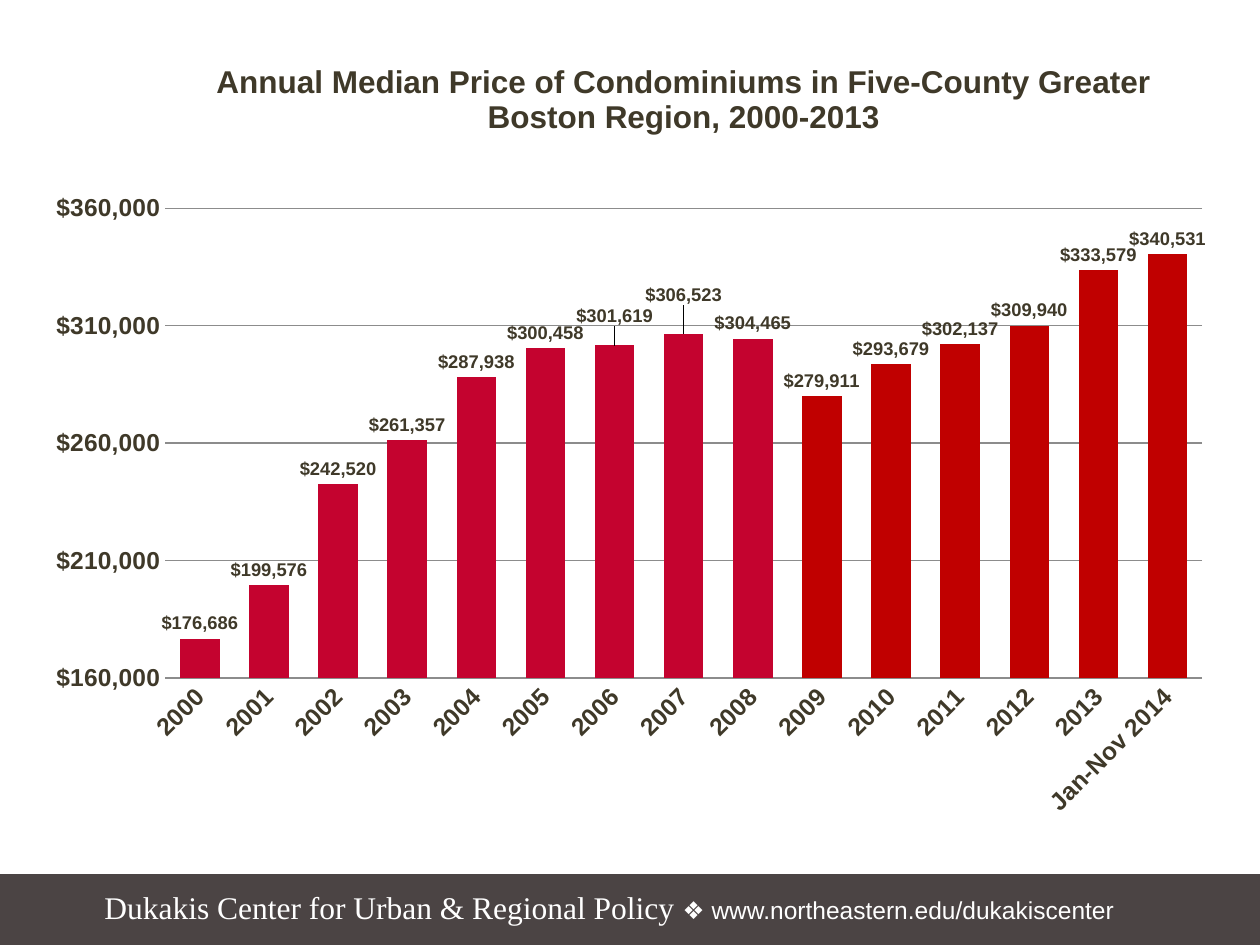
"""Build a slide with a column chart of Greater Boston condominium prices."""
from lxml import etree
from pptx import Presentation
from pptx import util as u
from pptx.chart import data as cd
from pptx.dml.color import RGBColor
from pptx.enum import chart as ch, shapes, text
from pptx.oxml import parse_xml
from pptx.oxml.ns import nsdecls, qn

TITLE = "Annual Median Price of Condominiums in Five-County Greater Boston Region, 2000-2013"
FOOTER = [("Dukakis Center for Urban & Regional Policy ", 18, "Times New Roman"),
          ("❖ www.northeastern.edu/dukakiscenter", 14, "Arial")]
YEARS = [str(y) for y in range(2000, 2014)] + ["Jan-Nov 2014"]
PRICES = [176686, 199576, 242520, 261357, 287938, 300458, 301619, 306523,
          304465, 279911, 293679, 302137, 309940, 333579, 340531]
FIRST_DARK = YEARS.index("2009")
RAISED_LABELS = {"2006": -0.017, "2007": -0.029}
COLORS = {"bar": "C4032F", "dark": "C00000", "text": "3F3929",
          "grid": "8C8C8C", "band": "4B4444", "white": "FFFFFF"}
MONEY = '"$"#,##0'


def rgb(name):
    return RGBColor.from_string(COLORS[name])


def style(font, size, color="text", bold=True, name="Arial"):
    font.size, font.bold, font.name = u.Pt(size), bold, name
    font.color.rgb = rgb(color)


def layout(**values):
    parts = "".join(f'<c:{k} val="{v}"/>' for k, v in values.items())
    return parse_xml(f'<c:layout {nsdecls("c")}><c:manualLayout>{parts}'
                     '</c:manualLayout></c:layout>')


def set_layout(parent, index, **values):
    for old in parent.findall(qn("c:layout")):
        parent.remove(old)
    parent.insert(index, layout(**values))


def add_footer(s):
    sp = s.shapes.add_shape(shapes.MSO_SHAPE.RECTANGLE, u.Pt(-0.7), u.Pt(499.7),
                            u.Pt(722.9), u.Pt(41.8))
    sp.shadow.inherit = False
    sp.fill.solid()
    sp.fill.fore_color.rgb = sp.line.color.rgb = rgb("band")
    sp.line.width = u.Pt(0.75)
    tf = s.shapes.add_textbox(u.Pt(52.6), u.Pt(504), u.Pt(614.2), u.Pt(28.8)).text_frame
    tf.word_wrap = True
    tf.auto_size = text.MSO_AUTO_SIZE.SHAPE_TO_FIT_TEXT
    for words, size, name in FOOTER:
        r = tf.paragraphs[0].add_run()
        r.text = words
        style(r.font, size, "white", False, name)


def add_price_chart(s):
    data = cd.CategoryChartData(number_format=MONEY)
    data.categories = YEARS
    data.add_series("Series 1", PRICES)
    chart = s.shapes.add_chart(ch.XL_CHART_TYPE.COLUMN_CLUSTERED, u.Pt(18.7), u.Pt(22.3),
                               u.Pt(682.6), u.Pt(453.6), data).chart
    style(chart.font, 10, bold=False)
    chart.has_legend = False
    chart.has_title = True
    tf = chart.chart_title.text_frame
    tf.text = TITLE
    style(tf.paragraphs[0].runs[0].font, 18)
    chart.chart_title.include_in_layout = False
    set_layout(chart.chart_title._element, 1, xMode="edge", yMode="edge", x=0.149, y=0.02)
    set_layout(chart._chartSpace.chart.plotArea, 0, layoutTarget="inner", xMode="edge",
               yMode="edge", x=0.111, y=0.154, w=0.868, h=0.651)

    cat, val = chart.category_axis, chart.value_axis
    for axis in (cat, val):
        axis.major_tick_mark = axis.minor_tick_mark = ch.XL_TICK_MARK.NONE
        style(axis.tick_labels.font, 14)
    cat._element.find(qn("c:txPr")).find(qn("a:bodyPr")).set("rot", "-2700000")
    val.minimum_scale, val.maximum_scale, val.major_unit = 160000, 380000, 50000
    val.tick_labels.number_format = MONEY
    val.tick_labels.number_format_is_linked = False
    val.format.line.fill.background()
    for line in (cat.format.line, val.major_gridlines.format.line):
        line.color.rgb = rgb("grid")
        line.width = u.Pt(0.75)

    plot = chart.plots[0]
    plot.vary_by_categories = False
    plot.gap_width, plot.overlap = 75, -25
    ser = plot.series[0]
    ser.format.fill.solid()
    ser.format.fill.fore_color.rgb = rgb("bar")
    for i in range(FIRST_DARK, len(YEARS)):
        fill = ser.points[i].format.fill
        fill.solid()
        fill.fore_color.rgb = rgb("dark")

    labels = ser.data_labels
    labels.show_value = True
    labels.position = ch.XL_LABEL_POSITION.OUTSIDE_END
    labels.number_format = MONEY
    labels.number_format_is_linked = False
    style(labels.font, 10.5)
    for year, rise in RAISED_LABELS.items():
        i = YEARS.index(year)
        label = ser.points[i].data_label
        style(label.font, 10.5)
        label.position = ch.XL_LABEL_POSITION.OUTSIDE_END
        dl = labels._element.xpath(f'c:dLbl[c:idx/@val="{i}"]')[0]
        set_layout(dl, 1, x=0, y=rise)
        fmt = etree.Element(qn("c:numFmt"), formatCode=MONEY, sourceLinked="0")
        dl.insert(2, fmt)


def main():
    prs = Presentation()
    prs.slide_width, prs.slide_height = u.Pt(720), u.Pt(540)
    s = prs.slides.add_slide(prs.slide_layouts[6])
    add_footer(s)
    add_price_chart(s)
    prs.save("out.pptx")


if __name__ == "__main__":
    main()
